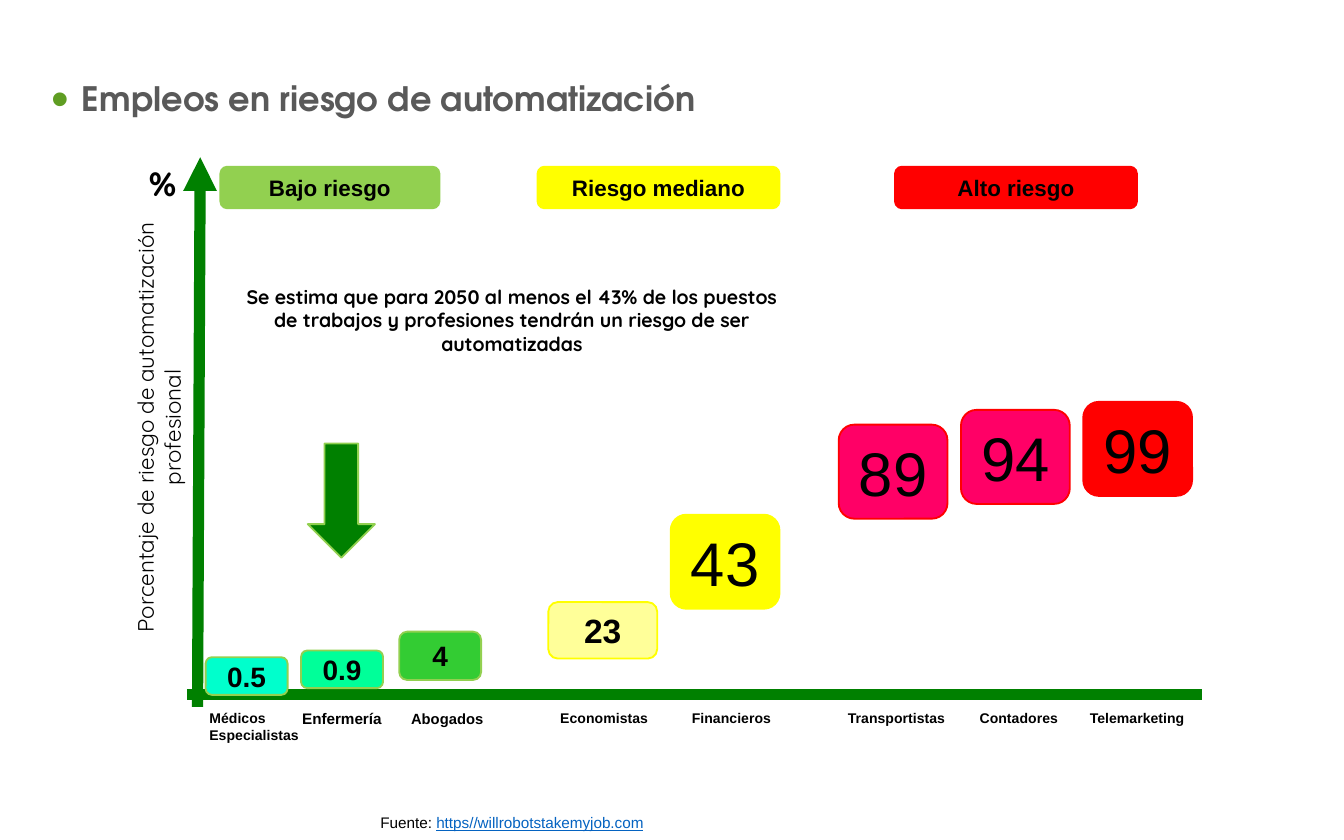
"""Builds a slide that ranks jobs by their risk of automation."""
import collections

import pptx
import pptx.dml.color
import pptx.enum.shapes
import pptx.enum.text
import pptx.oxml
import pptx.oxml.ns
import pptx.util

Box = collections.namedtuple("Box", "left top width height")
Job = collections.namedtuple("Job", "name value box fill line size bold label_left label_width label_size")

SHAPES = pptx.enum.shapes.MSO_SHAPE
ALIGN = pptx.enum.text.PP_ALIGN
MIDDLE = pptx.enum.text.MSO_ANCHOR.MIDDLE
COLUMNS = 100
SLIDE_WIDTH, SLIDE_HEIGHT = pptx.util.Inches(10), pptx.util.Inches(6.25)

GREEN, LIME, YELLOW, RED, PINK, BLACK = "008000", "92D050", "FFFF00", "FF0000", "FF0066", "000000"

TITLE_BOX = Box(3.1, 4.8, 72.8, 5.4)
CHART_BOX = Box(14.7, 11.7, 74.7, 40.9)
SOURCE_BOX = Box(27.9, 60.2, 20.9, 2.3)
BASELINE = 40
LABEL_TOP = 40.6

RISKS = [
    ("Bajo riesgo", 1.7, 16.3, LIME),
    ("Riesgo mediano", 25.3, 18, YELLOW),
    ("Alto riesgo", 51.9, 18, RED),
]
JOBS = [
    Job("Médicos\nEspecialistas", "0.5", Box(0.6, 37.2, 6.1, 2.8), "00FFCC", LIME, 15, True, -0.1, 8.7, 7.5),
    Job("Enfermería", "0.9", Box(7.7, 36.7, 6.1, 2.8), "00FF99", LIME, 15, True, 6.8, 8.6, 8.2),
    Job("Abogados", "4", Box(15, 35.3, 6.1, 3.6), "33CC33", LIME, 15, True, 14.9, 8.2, 7.9),
    Job("Economistas", "23", Box(26.1, 33.1, 8.1, 4.2), "FFFF99", YELLOW, 18, True, 26, 9.2, 7.5),
    Job("Financieros", "43", Box(35.2, 26.6, 8.1, 7), YELLOW, YELLOW, 33, False, 35.8, 9, 7.5),
    Job("Transportistas", "89", Box(47.7, 19.9, 8.1, 7), PINK, RED, 33, False, 47.4, 9.9, 7.5),
    Job("Contadores", "94", Box(56.8, 18.8, 8.1, 7), PINK, RED, 33, False, 57.2, 7.8, 7.5),
    Job("Telemarketing", "99", Box(65.9, 18.2, 8.1, 7), RED, RED, 33, False, 65.4, 9.2, 7.5),
]


def cells(count):
    """Turn a count of grid columns into a length."""
    return round(SLIDE_WIDTH * count / COLUMNS)


def within(area, box):
    """Move a box from the coordinates of its area to those of the slide."""
    return Box(area.left + box.left, area.top + box.top, box.width, box.height)


def colour(value):
    """Turn a hex string into a colour."""
    return pptx.dml.color.RGBColor.from_string(value)


def format_span(span, size, bold=False, face="Arial", ink=BLACK):
    """Give one run its font."""
    span.font.name = face
    span.font.size = pptx.util.Pt(size)
    span.font.bold = bold
    span.font.color.rgb = colour(ink)


def write(frame, text, size, align=ALIGN.LEFT, inset=None, **font):
    """Fill a text frame and format all its paragraphs."""
    frame.word_wrap = True
    frame.text = text
    if inset is not None:
        frame.margin_left = frame.margin_right = cells(inset)
        frame.margin_top = frame.margin_bottom = cells(inset)
    for para in frame.paragraphs:
        para.alignment = align
        for span in para.runs:
            format_span(span, size, **font)


def add_text(page, box, text, size, **style):
    """Add a wrapped text box."""
    label = page.shapes.add_textbox(*map(cells, box))
    write(label.text_frame, text, size, **style)
    return label


def add_block(page, kind, box, fill, line):
    """Add a flat filled shape with a thin outline."""
    block = page.shapes.add_shape(kind, *map(cells, box))
    block.shadow.inherit = False
    block.fill.solid()
    block.fill.fore_color.rgb = colour(fill)
    block.line.color.rgb = colour(line)
    block.line.width = pptx.util.Pt(1)
    return block


def add_badge(page, box, text, fill, line, size, bold):
    """Add a rounded block with centred text."""
    badge = add_block(page, SHAPES.ROUNDED_RECTANGLE, box, fill, line)
    badge.text_frame.vertical_anchor = MIDDLE
    write(badge.text_frame, text, size, align=ALIGN.CENTER, inset=0.4, bold=bold)


def add_axis(page, area, start, end, arrow=False):
    """Draw a thick axis between two points of the area."""
    points = [cells(area[side] + point[side]) for point in (start, end) for side in (0, 1)]
    axis = page.shapes.add_connector(pptx.enum.shapes.MSO_CONNECTOR.STRAIGHT, *points)
    axis.line.color.rgb = colour(GREEN)
    axis.line.width = pptx.util.Pt(6)
    if arrow:
        head = pptx.oxml.parse_xml(f'<a:tailEnd {pptx.oxml.ns.nsdecls("a")} type="triangle"/>')
        axis.line._get_or_add_ln().append(head)
    effects = pptx.oxml.parse_xml(f'<a:effectLst {pptx.oxml.ns.nsdecls("a")}/>')
    axis._element.spPr.append(effects)


def add_title(page, box):
    """Place the bulleted slide title."""
    title = page.shapes.title
    title.left, title.top, title.width, title.height = map(cells, box)
    frame = title.text_frame
    frame.auto_size = pptx.enum.text.MSO_AUTO_SIZE.NONE
    frame.vertical_anchor = MIDDLE
    write(frame, "Empleos en riesgo de automatización", 18, bold=True,
          face="TeX Gyre Adventor", ink="595959")
    frame.margin_left = frame.margin_right = cells(0.7)
    frame.margin_top = frame.margin_bottom = cells(0.4)
    para = frame.paragraphs[0]
    para.line_spacing = 0.9
    para.space_before = pptx.util.Pt(0)
    properties = para._p.get_or_add_pPr()
    properties.set("marL", str(cells(2.3)))
    properties.set("indent", str(-cells(2.3)))
    for child in ('buClr><a:srgbClr val="5F9D22"/></a:buClr', 'buSzPct val="150000"/',
                  'buFont typeface="Arial"/', 'buChar char="•"/'):
        name, rest = child.split(">" if "><" in child else " ", 1)
        joint = ">" if "><" in child else " "
        xml = f'<a:{name} {pptx.oxml.ns.nsdecls("a")}{joint}{rest}>'
        properties.append(pptx.oxml.parse_xml(xml))


def add_risk_chart(page, area):
    """Draw the axes, risk levels, jobs and remarks of the chart."""
    add_axis(page, area, (-0.8, BASELINE), (area.width, BASELINE))
    add_axis(page, area, (0, area.height), (0.2, 0), arrow=True)
    for text, left, width, fill in RISKS:
        add_badge(page, within(area, Box(left, 0.7, width, 3.1)), text, fill, fill, 12, True)
    for job in JOBS:
        add_badge(page, within(area, job.box), job.value, job.fill, job.line, job.size, job.bold)
        height = 2.3 + 1.2 * job.name.count("\n")
        label = Box(job.label_left, LABEL_TOP, job.label_width, height)
        add_text(page, within(area, label), job.name, job.label_size, bold=True)
    add_text(page, within(area, Box(-4.6, -0.1, 2.6, 4)), "%", 18, bold=True, face="Quicksand")
    caption = add_text(page, within(area, Box(-22.2, 17.6, 38.6, 5)),
                       "Porcentaje de riesgo de automatización profesional", 12,
                       align=ALIGN.CENTER, face="Quicksand")
    caption.rotation = 270
    add_text(page, within(area, Box(2.6, 9, 41.6, 6.3)),
             "Se estima que para 2050 al menos el 43% de los puestos de trabajos y "
             "profesiones tendrán un riesgo de ser automatizadas",
             10.5, align=ALIGN.CENTER, bold=True, face="Quicksand")
    add_block(page, SHAPES.DOWN_ARROW, within(area, Box(8.2, 21.3, 5, 8.5)), GREEN, LIME)


def add_source(page, box):
    """Place the source line with its underlined address."""
    source = add_text(page, box, "Fuente: ", 8.2)
    frame = source.text_frame
    frame.word_wrap = False
    frame.margin_left = frame.margin_right = cells(0.4)
    para = frame.paragraphs[0]
    para.line_spacing = 0.9
    address = para.add_run()
    address.text = "https//willrobotstakemyjob.com"
    format_span(address, 8.2, ink="0563C1")
    address.font.underline = True


def main():
    """Build and save the deck."""
    deck = pptx.Presentation()
    deck.slide_width, deck.slide_height = SLIDE_WIDTH, SLIDE_HEIGHT
    page = deck.slides.add_slide(deck.slide_layouts[5])
    add_title(page, TITLE_BOX)
    add_risk_chart(page, CHART_BOX)
    add_source(page, SOURCE_BOX)
    deck.save("out.pptx")


if __name__ == "__main__":
    main()
